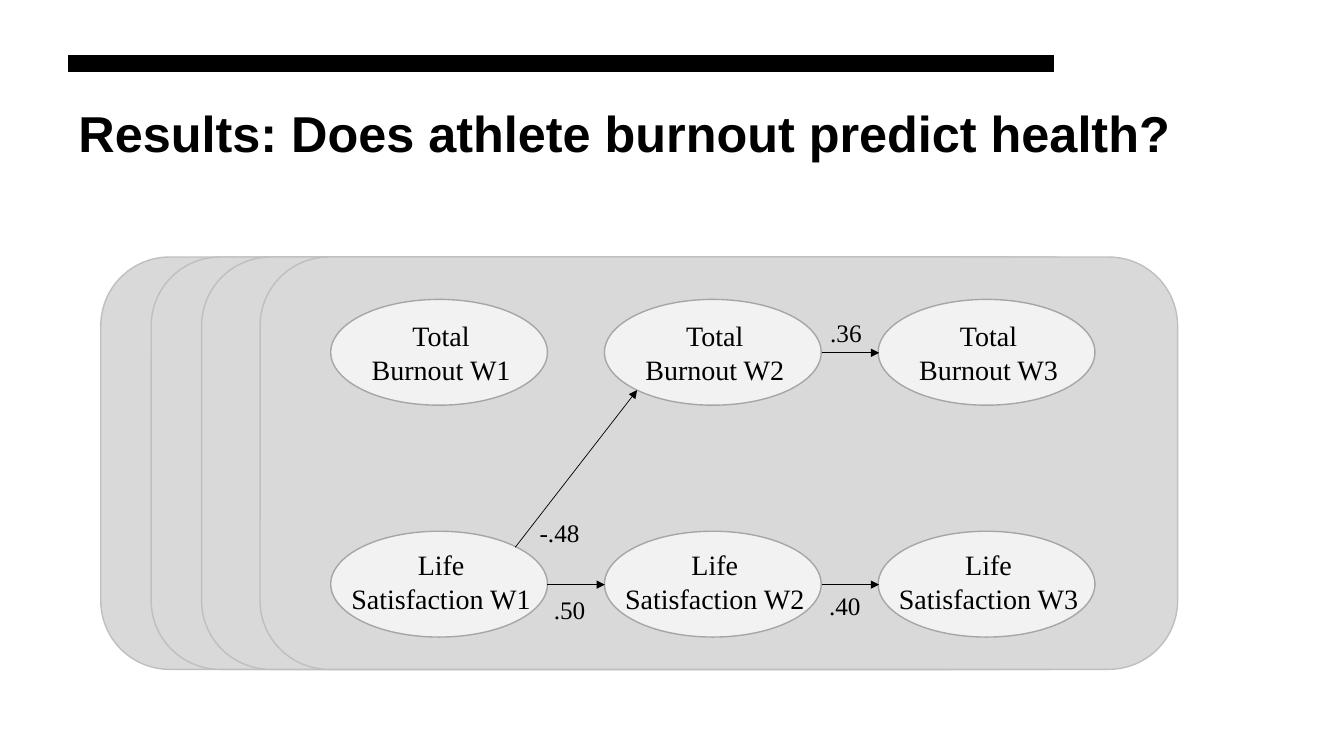
from pptx import Presentation
from pptx import util as u
from pptx.dml.color import RGBColor
from pptx.enum import shapes, text
from pptx.oxml.ns import qn
from lxml import etree

COLORS = {"ink": "000000", "panel": "D9D9D9", "panel_edge": "BFBFBF",
          "oval": "F2F2F2", "oval_edge": "A6A6A6"}
SERIF = "Times New Roman"
OVAL_W, OVAL_H, OVAL_STEP = 2.15, 1.05, 2.715
FRONT_LEFT = 2.58
PANEL_LEFTS = (1.0, 1.5, 2.0, FRONT_LEFT)
PANEL_TOP, PANEL_W, PANEL_H = 2.55, 9.1, 4.09


def color(key):
    return RGBColor.from_string(COLORS[key])


def add_box(slide, kind, left, top, width, height, fill, edge):
    box = slide.shapes.add_shape(kind, *map(u.Inches, (left, top, width, height)))
    box.shadow.inherit = False
    box.fill.solid()
    box.fill.fore_color.rgb = color(fill)
    box.line.color.rgb = color(edge)
    box.line.width = u.Pt(1)


def add_label(slide, wording, left, top, width, height, size, font=SERIF,
              bold=False, align=text.PP_ALIGN.CENTER, spacing=1.0):
    label = slide.shapes.add_textbox(*map(u.Inches, (left, top, width, height)))
    frame = label.text_frame
    frame.word_wrap = True
    frame.vertical_anchor = text.MSO_ANCHOR.MIDDLE
    paragraph = frame.paragraphs[0]
    paragraph.alignment = align
    paragraph.line_spacing = spacing
    run = paragraph.add_run()
    run.text = wording
    run.font.name = font
    run.font.size = u.Pt(size)
    run.font.bold = bold
    run.font.color.rgb = color("ink")


def add_arrow(slide, x1, y1, x2, y2):
    arrow = slide.shapes.add_connector(
        shapes.MSO_CONNECTOR.STRAIGHT, *map(u.Inches, (x1, y1, x2, y2)))
    arrow.line.color.rgb = color("ink")
    arrow.line.width = u.Pt(0.5)
    etree.SubElement(arrow.line._get_or_add_ln(), qn("a:tailEnd"), type="triangle")
    etree.SubElement(arrow._element.spPr, qn("a:effectLst"))


def add_header(slide, left, top, width):
    # Black rule above the title
    add_box(slide, shapes.MSO_SHAPE.RECTANGLE, left, top, 9.77, 0.16, "ink", "ink")
    add_label(slide, "Results: Does athlete burnout predict health?",
              left, top + 0.43, width, 0.74, 36, font="Arial", bold=True,
              align=text.PP_ALIGN.LEFT, spacing=0.9)


def add_panels(slide, lefts, top, width, height):
    for left in lefts:
        add_box(slide, shapes.MSO_SHAPE.ROUNDED_RECTANGLE, left, top, width, height,
                "panel", "panel_edge")


def add_path_model(slide, left, top):
    # Measures by row, waves by column: name, oval top, label inset, label width
    rows = (("Total Burnout", 0.42, 0.14, 1.64),
            ("Life Satisfaction", 2.72, 0.11, 2.0))
    for measure, row_top, inset, label_width in rows:
        for wave in range(3):
            oval_left = left + 0.7 + wave * OVAL_STEP
            add_box(slide, shapes.MSO_SHAPE.OVAL, oval_left, top + row_top,
                    OVAL_W, OVAL_H, "oval", "oval_edge")
            label_left = oval_left + (OVAL_W - label_width) / 2 + 0.02
            add_label(slide, f"{measure} W{wave + 1}", label_left,
                      top + row_top + inset, label_width, 0.77, 20)

    # Significant paths: coefficient, arrow start and end, label centre and top
    paths = ((".36", (5.57, 0.95), (6.14, 0.95), (5.81, 0.55)),
             ("-.48", (2.53, 2.88), (3.74, 1.32), (2.97, 2.53)),
             (".50", (2.85, 3.25), (3.42, 3.25), (3.07, 3.3)),
             (".40", (5.57, 3.25), (6.14, 3.25), (5.8, 3.26)))
    for coefficient, (x1, y1), (x2, y2), (center, label_top) in paths:
        add_arrow(slide, left + x1, top + y1, left + x2, top + y2)
        add_label(slide, coefficient, left + center - 0.37, top + label_top,
                  0.74, 0.4, 18)


def main():
    deck = Presentation()
    deck.slide_width, deck.slide_height = u.Inches(13.33), u.Inches(7.5)
    slide = deck.slides.add_slide(deck.slide_layouts[6])
    add_panels(slide, PANEL_LEFTS, PANEL_TOP, PANEL_W, PANEL_H)
    add_path_model(slide, FRONT_LEFT, PANEL_TOP)
    add_header(slide, 0.68, 0.55, 11.5)
    deck.save("out.pptx")


if __name__ == "__main__":
    main()
